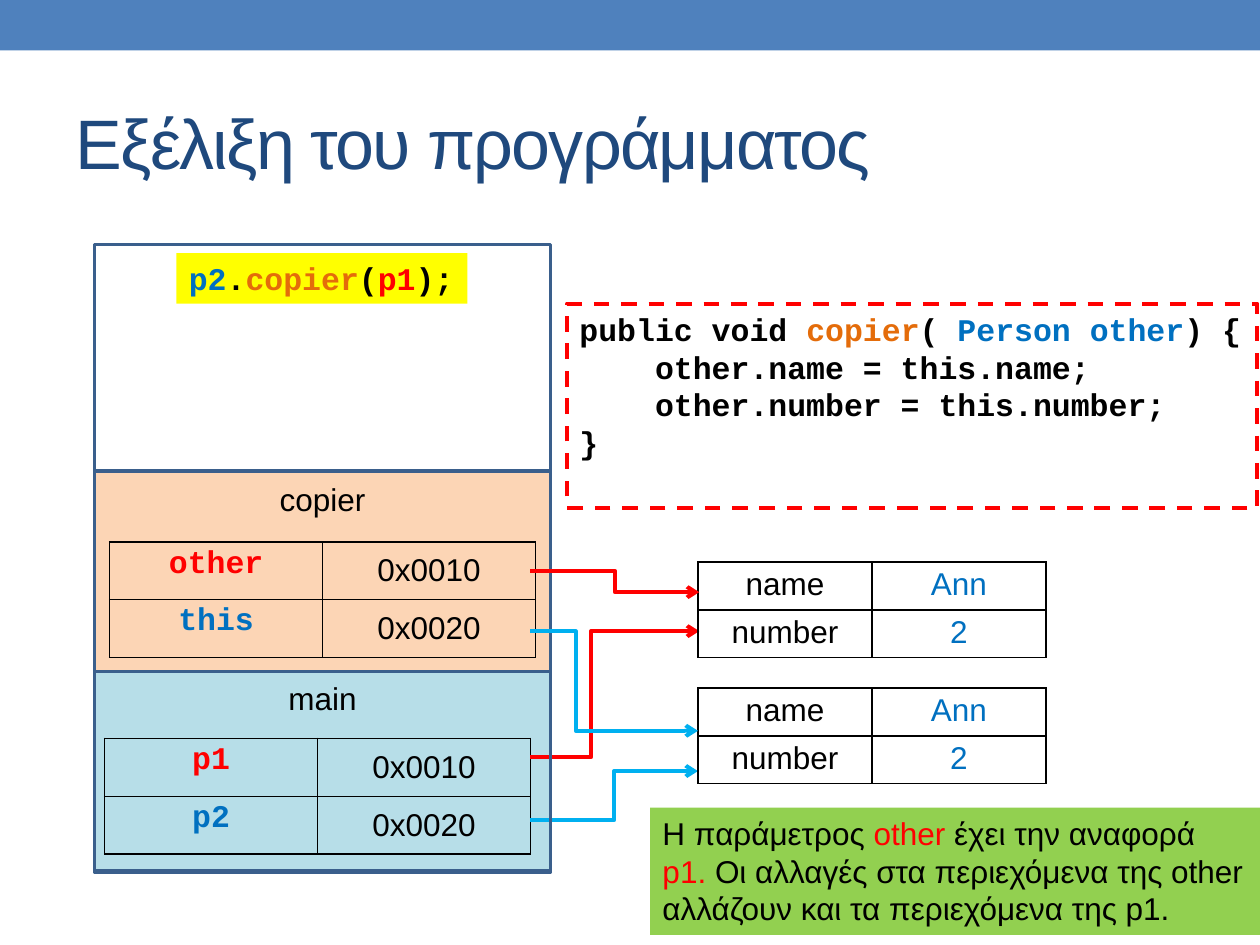
from lxml.etree import SubElement
from pptx import Presentation
from pptx.dml.color import RGBColor
from pptx.enum.dml import MSO_LINE
from pptx.enum.shapes import MSO_CONNECTOR, MSO_SHAPE
from pptx.enum.text import MSO_ANCHOR, PP_ALIGN
from pptx.oxml.ns import qn
from pptx.util import Pt

PX = 9144
SANS, MONO = "Arial", "Courier New"
BLACK, RED, BLUE, SKY = "000000", "FF0000", "0070C0", "00B0F0"
ORANGE, NAVY = "E46C0A", "3A5F8C"


def px(*values):
    return [v * PX for v in values]


def rgb(color):
    return RGBColor.from_string(color)


def style(r, color, font=SANS, size=18, bold=False):
    r.font.name, r.font.size, r.font.bold = font, Pt(size), bold
    r.font.color.rgb = rgb(color)


def write(p, parts, font=SANS, bold=False, align=PP_ALIGN.LEFT):
    p.alignment = align
    for text, color in parts:
        r = p.add_run()
        r.text = text
        style(r, color, font, bold=bold)


def add_box(s, box, fill=None, line=None, width=2.08):
    sp = s.shapes.add_shape(MSO_SHAPE.RECTANGLE, *px(*box))
    sp.shadow.inherit = False
    if fill:
        sp.fill.solid()
        sp.fill.fore_color.rgb = rgb(fill)
    else:
        sp.fill.background()
    if line:
        sp.line.color.rgb = rgb(line)
        sp.line.width = Pt(width)
    else:
        sp.line.fill.background()
    tf = sp.text_frame
    tf.vertical_anchor = MSO_ANCHOR.TOP
    tf.word_wrap = True
    return sp


def add_borders(cell):
    tcPr = cell._tc.get_or_add_tcPr()
    for side in ("lnL", "lnR", "lnT", "lnB"):
        ln = SubElement(tcPr, qn(f"a:{side}"), w=str(Pt(1)))
        fill = SubElement(ln, qn("a:solidFill"))
        SubElement(fill, qn("a:srgbClr"), val=BLACK)


def add_grid(s, left, top, col_width, row_height, rows, key_font=SANS):
    shape = s.shapes.add_table(len(rows), 2, *px(left, top, 2 * col_width, len(rows) * row_height))
    table = shape.table
    table.first_row = table.horz_banding = False
    for i, row in enumerate(rows):
        table.rows[i].height = row_height * PX
        for j, part in enumerate(row):
            cell = table.cell(i, j)
            add_borders(cell)
            cell.fill.background()
            cell.margin_top = cell.margin_bottom = 4 * PX
            is_key = j == 0 and key_font == MONO
            if j == 1 and key_font == MONO:
                cell.vertical_anchor = MSO_ANCHOR.MIDDLE
            write(cell.text_frame.paragraphs[0], [part], key_font if is_key else SANS,
                  is_key, PP_ALIGN.CENTER)


def add_frame(s, box, fill, name, grid_offset, keys):
    left, top = box[:2]
    sp = add_box(s, box, fill, NAVY)
    sp.text_frame.margin_top = 7 * PX
    write(sp.text_frame.paragraphs[0], [(name, BLACK)], align=PP_ALIGN.CENTER)
    rows = [[(key, color), (address, BLACK)]
            for key, color, address in zip(keys, (RED, BLUE), ("0x0010", "0x0020"))]
    add_grid(s, left + grid_offset[0], top + grid_offset[1], 169, 46, rows, MONO)


def add_person(s, left, top):
    rows = [[("name", BLACK), ("Ann", BLUE)], [("number", BLACK), ("2", BLUE)]]
    add_grid(s, left, top, 138, 38, rows)


def add_reference(s, start, end, color, bend):
    c = s.shapes.add_connector(MSO_CONNECTOR.ELBOW, *px(*start, *end))
    c.line.color.rgb = rgb(color)
    c.line.width = Pt(2.25)
    SubElement(c.line._get_or_add_ln(), qn("a:tailEnd"), type="arrow")
    spPr = c._element.spPr
    SubElement(spPr, qn("a:effectLst"))
    SubElement(spPr.find(qn("a:prstGeom")).find(qn("a:avLst")), qn("a:gd"),
               name="adj1", fmla=f"val {round(bend * 100000)}")


def add_title(s, box):
    title = s.shapes.title
    title.left, title.top, title.width, title.height = px(*box)
    tf = title.text_frame
    tf.text = "Εξέλιξη του προγράμματος"
    tf.vertical_anchor = MSO_ANCHOR.MIDDLE
    p = tf.paragraphs[0]
    p.alignment = PP_ALIGN.LEFT
    style(p.runs[0], "1F497D", size=40)
    p.runs[0].font._element.set("spc", "-100")


def add_code(s, box):
    sp = add_box(s, box, line=RED, width=2.25)
    sp.line.dash_style = MSO_LINE.DASH
    tf = sp.text_frame
    tf.word_wrap = False
    lines = [
        (0, [("public void ", BLACK), ("copier", ORANGE), ("( ", BLACK),
             ("Person other", BLUE), (") {", BLACK)]),
        (60, [("other.name = this.name;", BLACK)]),
        (60, [("other.number = this.number;", BLACK)]),
        (0, [("}", BLACK)]),
    ]
    for i, (indent, parts) in enumerate(lines):
        p = tf.add_paragraph() if i else tf.paragraphs[0]
        write(p, parts, MONO, True)
        p._p.get_or_add_pPr().set("marL", str(indent * PX))


def add_call(s, box):
    tf = add_box(s, box, "FFFF00").text_frame
    tf.word_wrap = False
    write(tf.paragraphs[0], [("p2", BLUE), (".", BLACK), ("copier", ORANGE), ("(", BLACK),
                             ("p1", RED), (");", BLACK)], MONO, True)


def add_note(s, box):
    tf = add_box(s, box, "92D050").text_frame
    write(tf.paragraphs[0], [
        ("Η παράμετρος ", BLACK), ("other ", RED), ("έχει την αναφορά ", BLACK), ("p1. ", RED),
        ("Οι αλλαγές στα περιεχόμενα της other αλλάζουν και τα περιεχόμενα της p1.", BLACK)])


def main():
    prs = Presentation()
    prs.slide_width, prs.slide_height = px(1000, 750)
    s = prs.slides.add_slide(prs.slide_layouts[5])
    add_box(s, (0, 0, 1000, 40), "4F81BD")
    add_title(s, (50, 58, 900, 108))
    add_frame(s, (75, 532, 362, 159), "B7DEE8", "main", (8, 54), ("p1", "p2"))
    add_reference(s, (421, 601), (555, 501), RED, 0.36)
    add_reference(s, (421, 651), (554, 612), SKY, 0.5)
    for top in (446, 546):
        add_person(s, 554, top)
    add_box(s, (75, 194, 362, 498), line=NAVY)
    add_frame(s, (75, 374, 362, 159), "FCD5B5", "copier", (12, 56), ("other", "this"))
    add_reference(s, (421, 453), (555, 470), RED, 0.5)
    add_reference(s, (421, 501), (554, 580), SKY, 0.27)
    add_code(s, (450, 241, 548, 162))
    add_call(s, (140, 201, 231, 40))
    add_note(s, (516, 641, 484, 101))
    prs.save("out.pptx")


if __name__ == "__main__":
    main()
